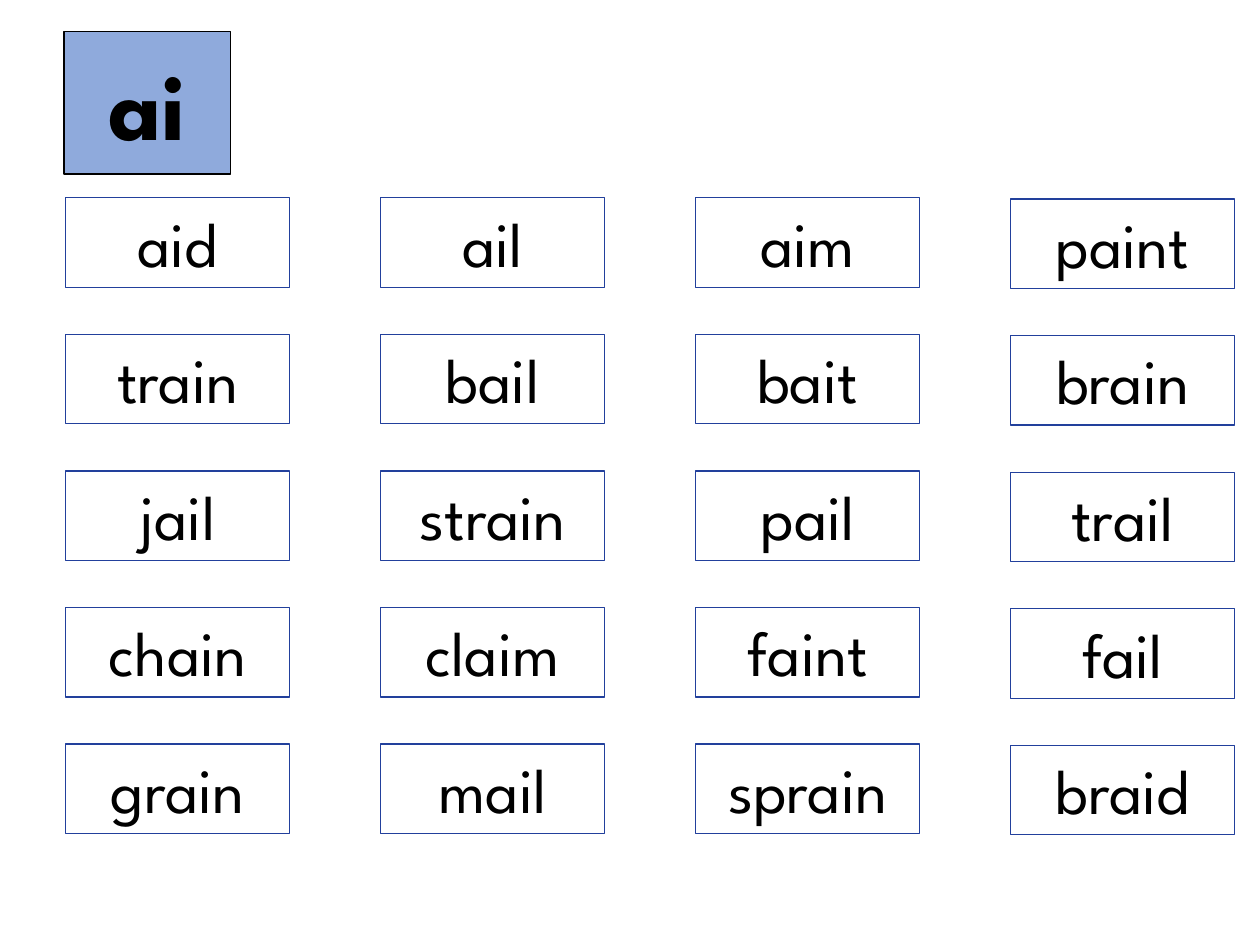
from pptx import Presentation
from pptx.dml.color import RGBColor
from pptx.enum.shapes import MSO_SHAPE
from pptx.enum.text import MSO_ANCHOR, MSO_AUTO_SIZE, PP_ALIGN
from pptx.util import Inches, Pt

BLACK = RGBColor(0x00, 0x00, 0x00)
CARD_BLUE = RGBColor(0x22, 0x40, 0x9C)
SOUND_BLUE = RGBColor(0x8F, 0xAA, 0xDC)
FONT = "League Spartan"

SOUND = "ai"
WORD_COLUMNS = [
    ["aid", "train", "jail", "chain", "grain"],
    ["ail", "bail", "strain", "claim", "mail"],
    ["aim", "bait", "pail", "faint", "sprain"],
    ["paint", "brain", "trail", "fail", "braid"],
]
COLUMN_STEP, ROW_STEP = 2.5, 1.084
CARD_WIDTH, CARD_HEIGHT = 1.78, 0.71
LAST_COLUMN_DROP = 0.01


def add_text_rectangle(page, box, text, size, line_color, line_width):
    """Add an unfilled, outlined rectangle with one centred line of text."""
    left, top, width, height = (Inches(length) for length in box)
    shape = page.shapes.add_shape(MSO_SHAPE.RECTANGLE, left, top, width, height)
    shape.shadow.inherit = False
    shape.fill.background()
    shape.line.color.rgb = line_color
    shape.line.width = Pt(line_width)
    shape.text_frame.word_wrap = True
    para = shape.text_frame.paragraphs[0]
    para.alignment = PP_ALIGN.CENTER
    span = para.add_run()
    span.text = text
    span.font.name = FONT
    span.font.size = Pt(size)
    span.font.color.rgb = BLACK
    return shape


def add_sound_tile(page, box):
    tile = add_text_rectangle(page, box, SOUND, 54, BLACK, 1)
    tile.fill.solid()
    tile.fill.fore_color.rgb = SOUND_BLUE
    tile.text_frame.vertical_anchor = MSO_ANCHOR.MIDDLE
    tile.text_frame.paragraphs[0].runs[0].font.bold = True


def add_word_grid(page, left, top):
    for column, words in enumerate(WORD_COLUMNS):
        drop = LAST_COLUMN_DROP if column == len(WORD_COLUMNS) - 1 else 0
        for row, word in enumerate(words):
            box = (left + column * COLUMN_STEP, top + row * ROW_STEP + drop,
                   CARD_WIDTH, CARD_HEIGHT)
            card = add_text_rectangle(page, box, word, 36, CARD_BLUE, 0.75)
            card.text_frame.vertical_anchor = MSO_ANCHOR.TOP
            card.text_frame.auto_size = MSO_AUTO_SIZE.SHAPE_TO_FIT_TEXT


def main():
    deck = Presentation()
    deck.slide_width, deck.slide_height = Inches(10), Inches(7.5)
    page = deck.slides.add_slide(deck.slide_layouts[6])
    add_word_grid(page, 0.52, 1.57)
    add_sound_tile(page, (0.51, 0.25, 1.32, 1.13))
    deck.save("out.pptx")


if __name__ == "__main__":
    main()
